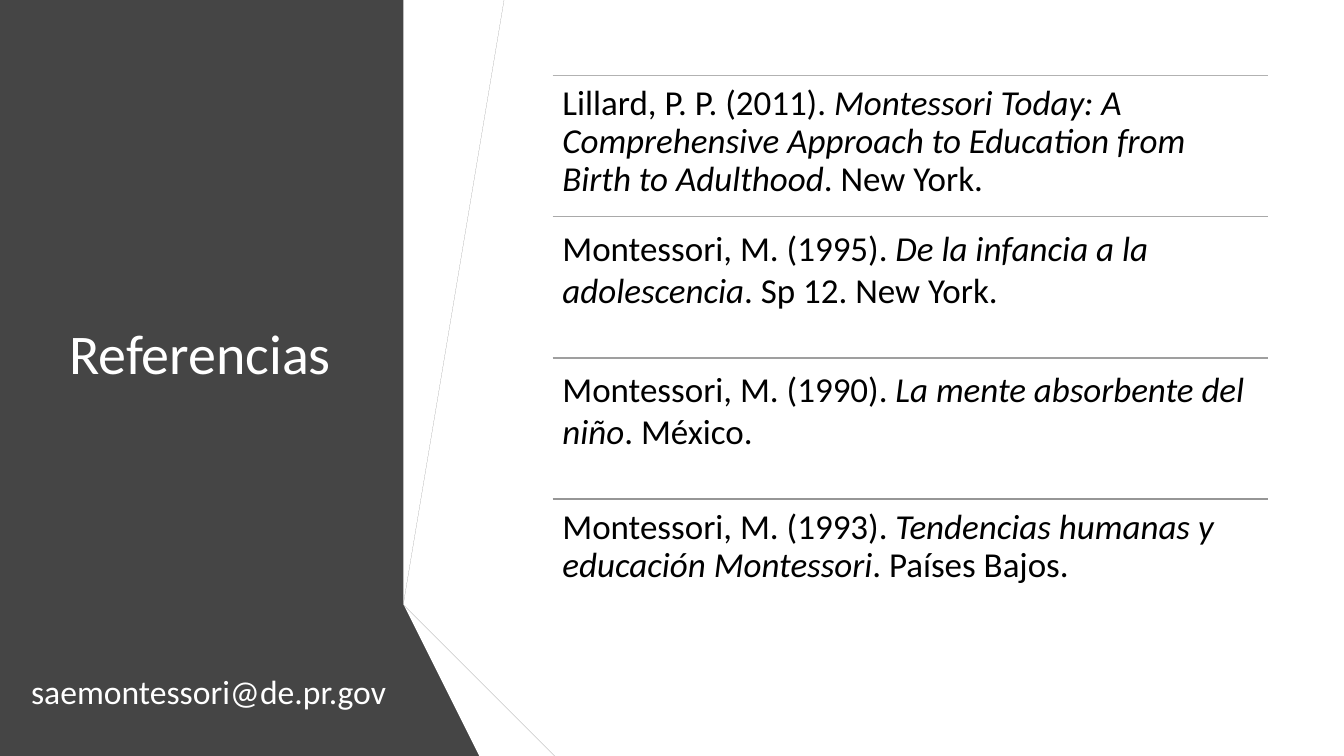
"""Builds the "Referencias" slide: an angled dark panel beside four ruled references."""
from lxml.etree import SubElement
from pptx import Presentation
from pptx.dml.color import RGBColor
from pptx.enum.shapes import MSO_CONNECTOR as Connector
from pptx.enum.text import MSO_ANCHOR as Anchor
from pptx.oxml.ns import qn
from pptx.util import Inches, Pt

WHITE = RGBColor(0xFF, 0xFF, 0xFF)
BLACK = RGBColor(0x00, 0x00, 0x00)
PANEL = RGBColor(0x45, 0x45, 0x45)
PALE = RGBColor(0xDD, 0xDD, 0xDD)
SLATE = RGBColor(0x59, 0x59, 0x59)
INK = RGBColor(0x26, 0x26, 0x26)
STEEL = RGBColor(0x6E, 0x6E, 0x6E)
SILVER = RGBColor(0xA6, 0xA6, 0xA6)
CHARCOAL = RGBColor(0x40, 0x40, 0x40)
RULES = [RGBColor(v, v, v) for v in (0xB2, 0xA9, 0x9F, 0x96)]


def add_text(left, top, width, height, runs, size, color, anchor=Anchor.TOP):
    """Add a wrapped text box of (text, italic) runs and return its frame."""
    frame = slide.shapes.add_textbox(
        Inches(left), Inches(top), Inches(width), Inches(height)).text_frame
    frame.word_wrap = True
    frame.vertical_anchor = anchor
    for text, italic in runs:
        run = frame.paragraphs[0].add_run()
        run.text = text
        run.font.name = "Calibri"
        run.font.size = Pt(size)
        run.font.italic = italic
        run.font.color.rgb = color
    return frame


prs = Presentation()
prs.slide_width, prs.slide_height = Inches(13.33), Inches(7.5)
slide = prs.slides.add_slide(prs.slide_layouts[6])

facets = [
    (PANEL, [(0, 0), (4.49, 0), (3.56, 5.75), (4.82, 7.5), (0, 7.5)]),
    (PALE, [(3.96, 5.78), (4.23, 5.83), (5.19, 0), (4.91, 0)]),
    (SLATE, [(4.85, 0), (4.57, 0), (3.63, 5.73), (3.9, 5.77)]),
    (INK, [(3.63, 5.73), (4.91, 7.5), (4.97, 7.5)]),
    (STEEL, [(3.96, 5.79), (5.54, 7.5), (5.6, 7.5)]),
    (SILVER, [(3.96, 5.79), (5.6, 7.5), (6.29, 7.5), (4.23, 5.83), (3.96, 5.78)]),
    (CHARCOAL, [(5.48, 7.5), (3.95, 5.83), (3.89, 5.78), (3.9, 5.77),
                (3.63, 5.73), (4.97, 7.5)]),
]
for color, points in facets:
    outline = slide.shapes.build_freeform(*points[0], scale=Inches(1))
    outline.add_line_segments(points[1:], close=True)
    facet = outline.convert_to_shape()
    facet.shadow.inherit = False
    facet.fill.solid()
    facet.fill.fore_color.rgb = color
    facet.line.fill.background()

title = add_text(0.59, 0.75, 3.04, 5.58, [("Referencias", False)], 40, WHITE, Anchor.MIDDLE)
title.paragraphs[0].line_spacing = 0.9

references = [
    ("Lillard, P. P. (2011). ",
     "Montessori Today: A Comprehensive Approach to Education from Birth to Adulthood",
     ". New York.", 0.9),
    ("Montessori, M. (1995). ", "De la infancia a la adolescencia", ". Sp 12. New York.", 1.0),
    ("Montessori, M. (1990). ", "La mente absorbente del niño", ". México.", 1.0),
    ("Montessori, M. (1993). ", "Tendencias humanas y educación Montessori",
     ". Países Bajos.", 0.9),
]
LEFT, TOP, WIDTH, PITCH = 5.48, 0.75, 7.1, 1.4
for row, (author, work, place, spacing) in enumerate(references):
    top = TOP + row * PITCH
    rule = slide.shapes.add_connector(
        Connector.STRAIGHT, Inches(LEFT), Inches(top), Inches(LEFT + WIDTH), Inches(top))
    rule.line.color.rgb = RULES[row]
    rule.line.width = Pt(1)
    SubElement(rule._element.spPr, qn("a:effectLst"))
    entry = add_text(LEFT, top, WIDTH, PITCH,
                     [(author, False), (work, True), (place, False)], 25, BLACK)
    entry.margin_left = entry.margin_right = Inches(0.1)
    entry.margin_top = entry.margin_bottom = Inches(0.1)
    entry.paragraphs[0].line_spacing = spacing

add_text(0.21, 6.61, 3.88, 0.5, [("saemontessori@de.pr.gov", False)], 24, WHITE)

prs.save("out.pptx")
